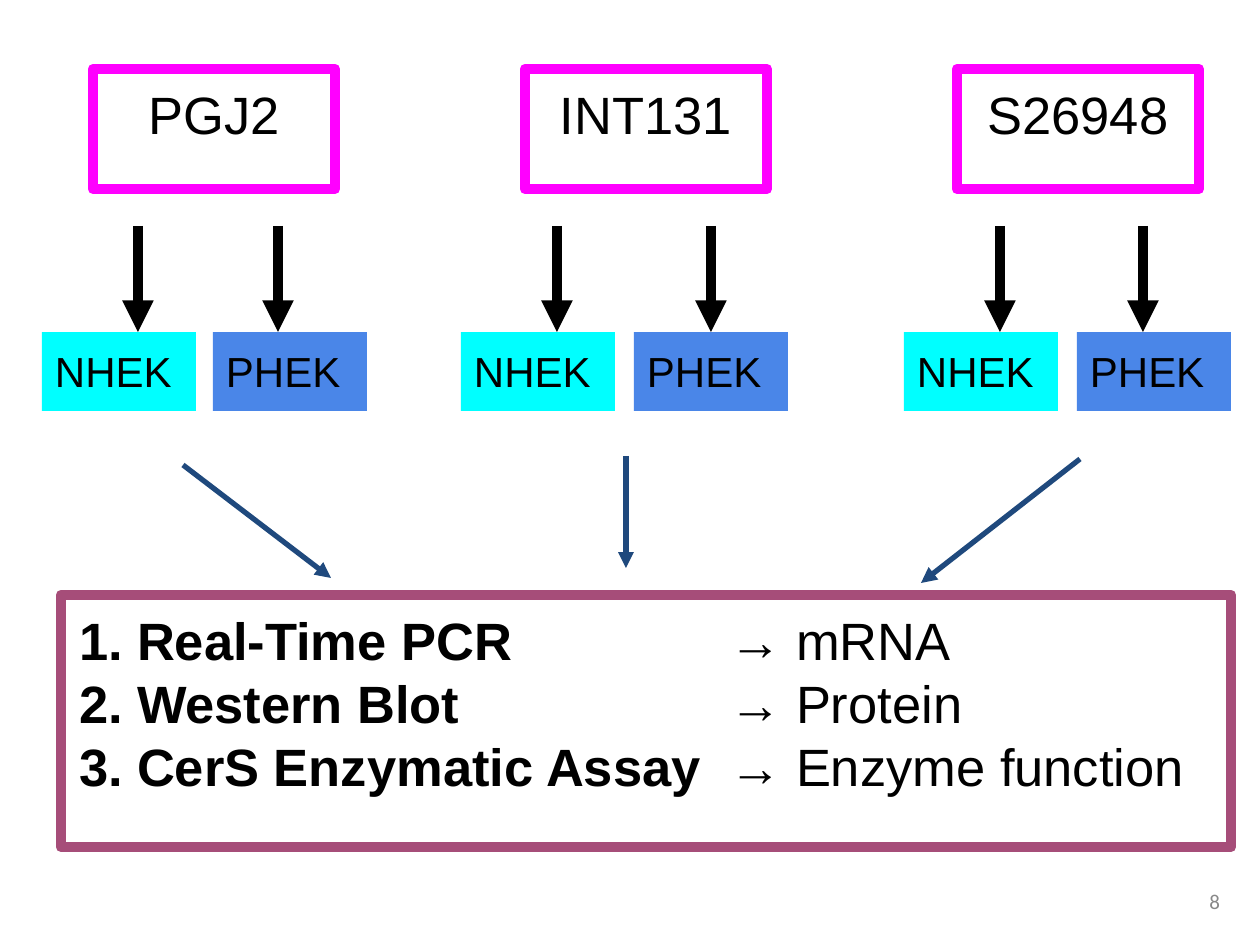
from dataclasses import dataclass

from lxml import etree
from pptx import Presentation
from pptx import util as u
from pptx.dml.color import RGBColor
from pptx.enum import shapes, text
from pptx.oxml import ns

PX_PER_INCH = 126
COLORS = {
    "black": "000000",
    "magenta": "FF00FF",
    "cyan": "00FFFF",
    "blue": "4A86E8",
    "navy": "1F497D",
    "plum": "A64D79",
    "gray": "888888",
}


@dataclass(frozen=True)
class Box:
    left: int
    top: int
    width: int
    height: int


@dataclass(frozen=True)
class Cell:
    label: str
    color: str
    left: int
    arrow_x: int


@dataclass(frozen=True)
class Treatment:
    name: str
    cells: tuple[Cell, Cell]


@dataclass(frozen=True)
class Arrow:
    start: tuple[int, int]
    end: tuple[int, int]
    color: str
    points: int


@dataclass(frozen=True)
class Assay:
    name: str
    result: str


def cell_pair(normal: tuple[int, int], psoriatic: tuple[int, int]) -> tuple[Cell, Cell]:
    return Cell("NHEK", "cyan", *normal), Cell("PHEK", "blue", *psoriatic)


TREATMENTS = (
    Treatment("PGJ2", cell_pair((42, 138), (213, 278))),
    Treatment("INT131", cell_pair((461, 557), (634, 711))),
    Treatment("S26948", cell_pair((904, 1000), (1077, 1143))),
)
ASSAY_ARROWS = (
    Arrow((183, 465), (331, 578), "navy", 3),
    Arrow((626, 456), (626, 568), "navy", 3),
    Arrow((1080, 459), (921, 583), "navy", 3),
)
ASSAYS = (
    Assay("Real-Time PCR", "mRNA"),
    Assay("Western Blot", "Protein"),
    Assay("CerS Enzymatic Assay", "Enzyme function"),
)


def px(value: int) -> u.Emu:
    return u.Emu(round(value * 914400 / PX_PER_INCH))


def rgb(name: str) -> RGBColor:
    return RGBColor.from_string(COLORS[name])


def place(shape, box: Box) -> None:
    shape.left, shape.top = px(box.left), px(box.top)
    shape.width, shape.height = px(box.width), px(box.height)


def add_run(paragraph, words: str, size: int, bold: bool = False,
            color: str = "black", font: str = "Arial") -> None:
    run = paragraph.add_run()
    run.text = words
    run.font.name = font
    run.font.size = u.Pt(size)
    run.font.bold = bold
    run.font.color.rgb = rgb(color)


def prepare_frame(shape, inset: int = 13):
    frame = shape.text_frame
    frame.word_wrap = True
    frame.auto_size = text.MSO_AUTO_SIZE.NONE
    frame.vertical_anchor = text.MSO_ANCHOR.TOP
    frame.margin_left = frame.margin_right = px(inset)
    frame.margin_top = frame.margin_bottom = px(inset)
    return frame


def outline(shape, color: str) -> None:
    shape.line.color.rgb = rgb(color)
    shape.line.width = u.Pt(6)
    etree.SubElement(shape.line._get_or_add_ln(), ns.qn("a:round"))


def add_box(slide, box: Box, label: str, size: int, alignment,
            fill: str | None = None, border: str | None = None) -> None:
    shape = slide.shapes.add_shape(
        shapes.MSO_SHAPE.RECTANGLE, *map(px, (box.left, box.top, box.width, box.height)))
    shape.shadow.inherit = False
    if fill:
        shape.fill.solid()
        shape.fill.fore_color.rgb = rgb(fill)
    else:
        shape.fill.background()
    if border:
        outline(shape, border)
    else:
        shape.line.fill.background()
    paragraph = prepare_frame(shape).paragraphs[0]
    paragraph.alignment = alignment
    add_run(paragraph, label, size)


def add_arrow(slide, arrow: Arrow) -> None:
    connector = slide.shapes.add_connector(
        shapes.MSO_CONNECTOR.STRAIGHT, *map(px, arrow.start + arrow.end))
    connector.line.color.rgb = rgb(arrow.color)
    connector.line.width = u.Pt(arrow.points)
    etree.SubElement(connector.line._get_or_add_ln(), ns.qn("a:tailEnd"), type="triangle")
    etree.SubElement(connector._element.spPr, ns.qn("a:effectLst"))


def fill_list(placeholder, box: Box, lines: list[str], numbered: bool) -> None:
    place(placeholder, box)
    frame = prepare_frame(placeholder)
    for index, line in enumerate(lines):
        paragraph = frame.paragraphs[0] if index == 0 else frame.add_paragraph()
        properties = paragraph._p.get_or_add_pPr()
        properties.set("marL", str(px(63 if numbered else 0)))
        properties.set("indent", str(px(-58 if numbered else 0)))
        if numbered:
            etree.SubElement(properties, ns.qn("a:buFont"), typeface="+mj-lt")
            etree.SubElement(properties, ns.qn("a:buAutoNum"), type="arabicPeriod")
        else:
            etree.SubElement(properties, ns.qn("a:buNone"))
        paragraph.space_before = u.Pt(0)
        paragraph.line_spacing = u.Pt(36)
        add_run(paragraph, line, 30, bold=numbered)


def add_page_number(slide) -> None:
    shape = slide.shapes.add_textbox(*map(px, (939, 876, 294, 50)))
    frame = prepare_frame(shape)
    frame.margin_top = frame.margin_bottom = px(6)
    frame.vertical_anchor = text.MSO_ANCHOR.MIDDLE
    paragraph = frame.paragraphs[0]
    paragraph.alignment = text.PP_ALIGN.RIGHT
    add_run(paragraph, "8", 12, color="gray", font="Calibri")


def main() -> None:
    presentation = Presentation()
    presentation.slide_width, presentation.slide_height = px(1260), px(945)
    slide = presentation.slides.add_slide(presentation.slide_layouts[3])
    title, assay_list, result_list = slide.placeholders
    title._element.getparent().remove(title._element)

    for column, treatment in enumerate(TREATMENTS):
        add_box(slide, Box(93 + 432 * column, 69, 242, 120), treatment.name, 30,
                text.PP_ALIGN.CENTER, border="magenta")
        for cell in treatment.cells:
            add_arrow(slide, Arrow((cell.arrow_x, 226), (cell.arrow_x, 332), "black", 6))
            add_box(slide, Box(cell.left, 332, 154, 79), cell.label, 24,
                    text.PP_ALIGN.LEFT, fill=cell.color)
    for arrow in ASSAY_ARROWS:
        add_arrow(slide, arrow)

    fill_list(assay_list, Box(61, 595, 1170, 252), [assay.name for assay in ASSAYS], True)
    outline(assay_list, "plum")
    fill_list(result_list, Box(716, 595, 515, 252),
              [f"→ {assay.result}" for assay in ASSAYS], False)
    add_page_number(slide)
    presentation.save("out.pptx")


if __name__ == "__main__":
    main()
